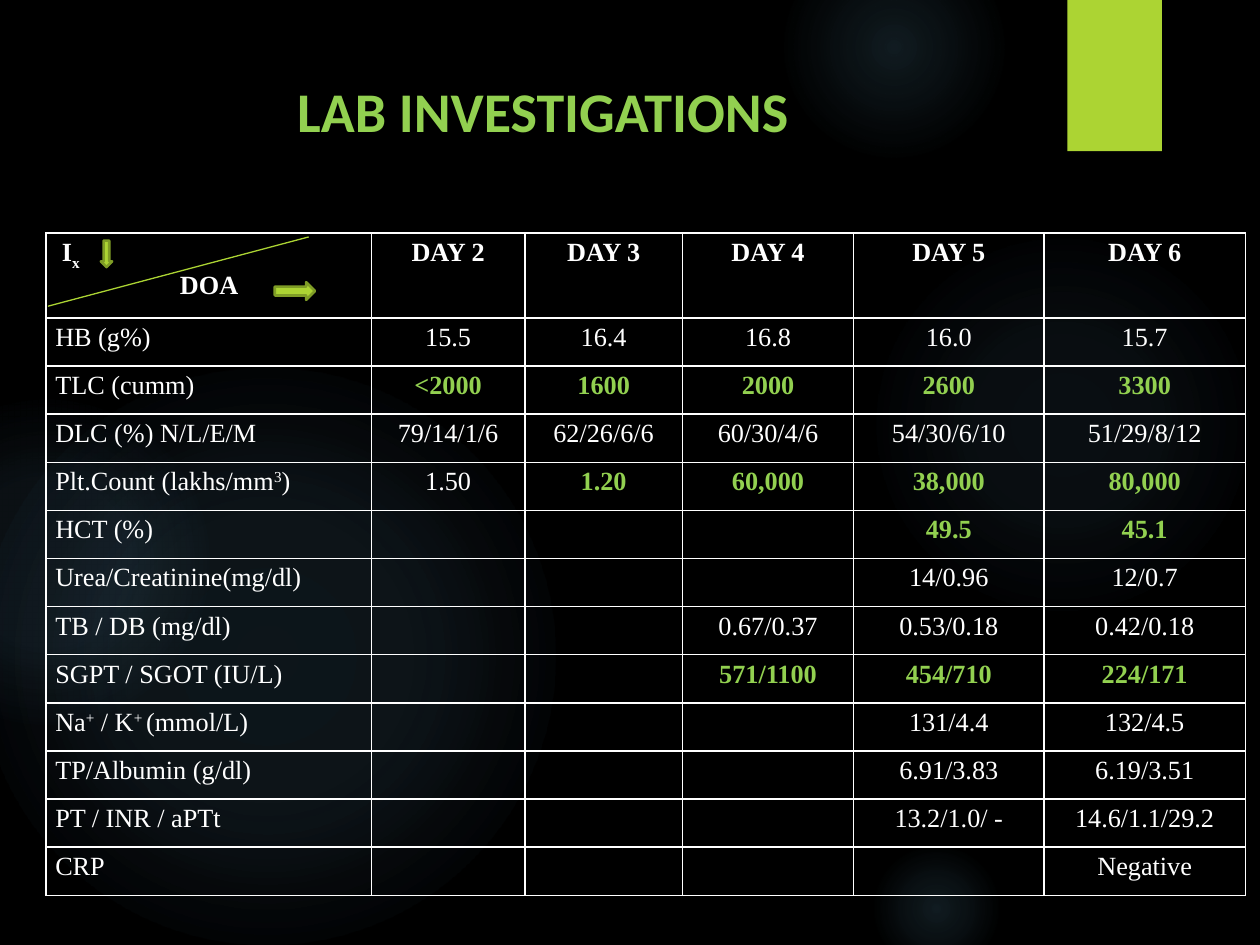
import lxml.etree
import pptx
import pptx.dml.color
import pptx.enum.shapes
import pptx.enum.text
import pptx.oxml.ns
import pptx.util

Pt = pptx.util.Pt
SHAPE = pptx.enum.shapes.MSO_SHAPE
ALIGN = pptx.enum.text.PP_ALIGN
ANCHOR = pptx.enum.text.MSO_ANCHOR

WHITE, LIME, LIME_EDGE, GREEN, GLOW = "FFFFFF", "ACD433", "7F9D26", "92D050", "7AC4F0"
BODY_FONT = "Times New Roman"
COLUMN_WIDTHS = [185.8, 87.8, 90, 97.9, 108.7, 115.2]
HEADER_HEIGHT, ROW_HEIGHT = 48.5, 27.5

# Odd pieces of a label are superscripts; values starting with "*" are highlighted.
ROWS = [
    (["HB (g%)"], ["15.5", "16.4", "16.8", "16.0", "15.7"]),
    (["TLC (cumm)"], ["*<2000", "*1600", "*2000", "*2600", "*3300"]),
    (["DLC (%) N/L/E/M"], ["79/14/1/6", "62/26/6/6", "60/30/4/6", "54/30/6/10", "51/29/8/12"]),
    (["Plt.Count (lakhs/mm", "3", ")"], ["1.50", "*1.20", "*60,000", "*38,000", "*80,000"]),
    (["HCT (%)"], ["", "", "", "*49.5", "*45.1"]),
    (["Urea/Creatinine(mg/dl)"], ["", "", "", "14/0.96", "12/0.7"]),
    (["TB / DB (mg/dl)"], ["", "", "0.67/0.37", "0.53/0.18", "0.42/0.18"]),
    (["SGPT / SGOT (IU/L)"], ["", "", "*571/1100", "*454/710", "*224/171"]),
    (["Na", "+", " / K", "+ ", "(mmol/L)"], ["", "", "", "131/4.4", "132/4.5"]),
    (["TP/Albumin (g/dl)"], ["", "", "", "6.91/3.83", "6.19/3.51"]),
    (["PT / INR / aPTt"], ["", "", "", "13.2/1.0/ -", "14.6/1.1/29.2"]),
    (["CRP"], ["", "", "", "", "Negative"]),
]


def color(value):
    return pptx.dml.color.RGBColor.from_string(value)


def add_xml(parent, tag, **attributes):
    values = {name: str(value) for name, value in attributes.items()}
    return lxml.etree.SubElement(parent, pptx.oxml.ns.qn(tag), values)


def add_run(paragraph, text, size=15, font=BODY_FONT, fill=WHITE, bold=False, baseline=0):
    run = paragraph.add_run()
    run.text = text
    run.font.size = Pt(size)
    run.font.name = font
    run.font.bold = bold
    run.font.color.rgb = color(fill)
    if baseline:
        run.font._element.set("baseline", str(baseline * 1000))


def add_solid(slide, kind, left, top, width, height, edge=None):
    shape = slide.shapes.add_shape(kind, Pt(left), Pt(top), Pt(width), Pt(height))
    shape.shadow.inherit = False
    shape.fill.solid()
    shape.fill.fore_color.rgb = color(LIME)
    if edge:
        shape.line.color.rgb = color(edge)
        shape.line.width = Pt(1.5)
    else:
        shape.line.fill.background()
    return shape


def add_glow(slide, left, top, diameter, stops):
    shape = add_solid(slide, SHAPE.OVAL, left, top, diameter, diameter)
    properties = shape._element.spPr
    solid = properties.find(pptx.oxml.ns.qn("a:solidFill"))
    gradient = add_xml(properties, "a:gradFill", rotWithShape=1)
    stop_list = add_xml(gradient, "a:gsLst")
    for position, opacity in stops:
        stop = add_xml(stop_list, "a:gs", pos=position * 1000)
        add_xml(add_xml(stop, "a:srgbClr", val=GLOW), "a:alpha", val=opacity * 1000)
    circle = add_xml(gradient, "a:path", path="circle")
    add_xml(circle, "a:fillToRect", l=50000, t=50000, r=50000, b=50000)
    properties.replace(solid, gradient)


def add_ribbon(slide):
    ribbon = add_solid(slide, SHAPE.RECTANGLE, 610, 0, 54, 86.4)
    effects = ribbon._element.spPr.find(pptx.oxml.ns.qn("a:effectLst"))
    shadow = add_xml(effects, "a:outerShdw", blurRad=Pt(3), dist=Pt(2), dir=5400000, rotWithShape=0)
    add_xml(add_xml(shadow, "a:srgbClr", val="000000"), "a:alpha", val=45000)


def add_title(slide, text):
    box = slide.shapes.add_textbox(Pt(0), Pt(43.2), Pt(620.6), Pt(38.9))
    frame = box.text_frame
    frame.word_wrap = True
    frame.margin_top = frame.margin_bottom = 0
    frame.vertical_anchor = ANCHOR.MIDDLE
    paragraph = frame.paragraphs[0]
    paragraph.alignment = ALIGN.CENTER
    add_run(paragraph, text, size=32, font="Calibri", fill=GREEN, bold=True)


def format_cell(cell):
    cell.margin_left = cell.margin_right = Pt(5.2)
    cell.margin_top = cell.margin_bottom = Pt(2.9)
    cell.fill.background()
    properties = cell._tc.get_or_add_tcPr()
    for index, side in enumerate(["a:lnL", "a:lnR", "a:lnT", "a:lnB"]):
        border = add_xml(properties, side, w=Pt(1))
        add_xml(add_xml(border, "a:solidFill"), "a:srgbClr", val=WHITE)
        properties.insert(index, border)


def write_value(cell, text, bold=False):
    paragraph = cell.text_frame.paragraphs[0]
    paragraph.alignment = ALIGN.CENTER
    highlighted = text.startswith("*")
    if text:
        add_run(paragraph, text.lstrip("*"), fill=GREEN if highlighted else WHITE,
                bold=bold or highlighted)
    else:
        add_xml(paragraph._p, "a:endParaRPr", sz=1500)


def write_label(cell, pieces):
    paragraph = cell.text_frame.paragraphs[0]
    for index, piece in enumerate(pieces):
        add_run(paragraph, piece, baseline=30 * (index % 2))


def write_corner(cell):
    first = cell.text_frame.paragraphs[0]
    second = cell.text_frame.add_paragraph()
    for paragraph, indent in [(first, 3.75), (second, 71.25)]:
        paragraph._p.get_or_add_pPr().set("marL", str(Pt(indent)))
    add_run(first, "I", bold=True)
    add_run(first, "x", bold=True, baseline=-25)
    add_run(second, "DOA", bold=True)


def add_results_table(slide):
    height = HEADER_HEIGHT + ROW_HEIGHT * len(ROWS)
    table = slide.shapes.add_table(len(ROWS) + 1, len(COLUMN_WIDTHS), Pt(26.4), Pt(133.2),
                                   Pt(sum(COLUMN_WIDTHS)), Pt(height)).table
    table.first_row = table.horz_banding = False
    for column, width in zip(table.columns, COLUMN_WIDTHS):
        column.width = Pt(width)
    for index, row in enumerate(table.rows):
        row.height = Pt(ROW_HEIGHT if index else HEADER_HEIGHT)
    for cell in table.iter_cells():
        format_cell(cell)
    write_corner(table.cell(0, 0))
    for column in range(1, len(COLUMN_WIDTHS)):
        write_value(table.cell(0, column), f"DAY {column + 1}", bold=True)
    for row, (label, values) in enumerate(ROWS, start=1):
        write_label(table.cell(row, 0), label)
        for column, value in enumerate(values, start=1):
            write_value(table.cell(row, column), value)


def add_diagonal(slide):
    line = slide.shapes.add_connector(pptx.enum.shapes.MSO_CONNECTOR.STRAIGHT,
                                      Pt(27.4), Pt(175), Pt(176.4), Pt(135.4))
    line.line.color.rgb = color(LIME)
    line.line.width = Pt(0.75)
    add_xml(line._element.spPr, "a:effectLst")


def main():
    presentation = pptx.Presentation()
    presentation.slide_width, presentation.slide_height = Pt(720), Pt(540)
    slide = presentation.slides.add_slide(presentation.slide_layouts[6])
    slide.background.fill.solid()
    slide.background.fill.fore_color.rgb = color("000000")
    add_glow(slide, 496, 131.8, 221.8, [(0, 7), (36, 6), (69, 0)])
    add_glow(slide, 447.8, -36, 126, [(0, 14), (36, 7), (73, 0)])
    add_glow(slide, 496, 480.2, 77.8, [(0, 14), (36, 7), (66, 0)])
    add_glow(slide, -12.2, 210.2, 329.8, [(0, 11), (36, 10), (75, 0)])
    add_glow(slide, -66.2, 228.2, 185.8, [(0, 8), (36, 8), (72, 0)])
    add_ribbon(slide)
    add_title(slide, "LAB INVESTIGATIONS")
    add_results_table(slide)
    add_solid(slide, SHAPE.DOWN_ARROW, 57.6, 137.5, 6.5, 15.1, LIME_EDGE)
    add_diagonal(slide)
    add_solid(slide, SHAPE.RIGHT_ARROW, 157, 161.3, 23, 10.1, LIME_EDGE)
    presentation.save("out.pptx")


if __name__ == "__main__":
    main()
